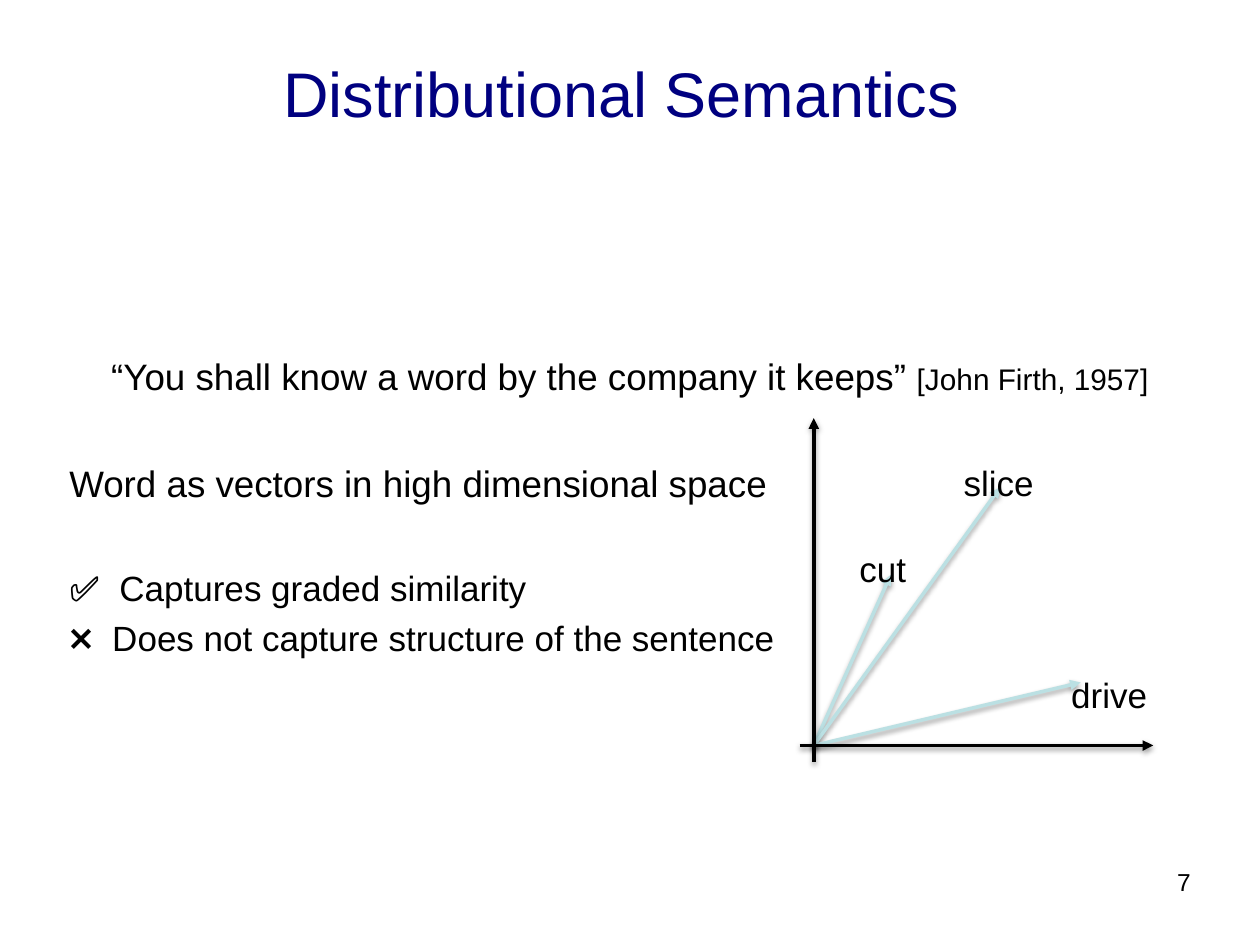
from lxml.etree import SubElement
from pptx import Presentation
from pptx.dml.color import RGBColor
from pptx.enum.shapes import MSO_CONNECTOR as Connector
from pptx.enum.text import MSO_ANCHOR as Anchor, MSO_AUTO_SIZE as AutoSize, PP_ALIGN as Align
from pptx.oxml import parse_xml
from pptx.oxml.ns import nsdecls, qn
from pptx.util import Pt

# Content: text with sizes, positions in points
TITLE = "Distributional Semantics "
PAGE_NUMBER = "7"
BODY = [  # spans of (text, size), alignment, space before
    ([("“You shall know a word by the company it keeps” ", 21), ("[John Firth, 1957]", 17)],
     Align.CENTER, 5),
    ([("Word as vectors in high dimensional space", 21)], Align.LEFT, 36),
    ([("✅  Captures graded similarity", 20)], Align.LEFT, 35),
    ([("❌  Does not capture structure of the sentence", 20)], Align.LEFT, 5),
]
ORIGIN = (465, 426)
VECTOR_TIPS = [(509, 328.5), (571.5, 278.5), (617.5, 390)]
VECTOR_LABELS = [("cut", (487.5, 309.5, 34.5, 29.5)),
                 ("slice", (547, 260, 48, 29.5)),
                 ("drive", (608.5, 381.5, 52, 29.5))]
AXES = [((457, ORIGIN[1]), (659, ORIGIN[1])),
        ((ORIGIN[0], 435.5), (ORIGIN[0], 239))]
BLACK, NAVY, PALE_BLUE = "000000", "000080", "BBE0E3"


def color(value):
    return RGBColor.from_string(value)


def place(shape, left, top, width, height):
    shape.left, shape.top = Pt(left), Pt(top)
    shape.width, shape.height = Pt(width), Pt(height)


def write(shape, paragraphs, ink=BLACK, anchor=Anchor.TOP, wrap=True):
    frame = shape.text_frame
    frame.auto_size = AutoSize.NONE if wrap else AutoSize.SHAPE_TO_FIT_TEXT
    frame.word_wrap, frame.vertical_anchor = wrap, anchor
    frame.margin_left = frame.margin_right = Pt(3.6)
    frame.margin_top = frame.margin_bottom = Pt(3.6)
    for index, (spans, align, before) in enumerate(paragraphs):
        para = frame.add_paragraph() if index else frame.paragraphs[0]
        para.alignment, para.space_before = align, Pt(before)
        properties = para._p.get_or_add_pPr()
        properties.set("marL", "0")
        properties.set("indent", "0")
        SubElement(properties, qn("a:buNone"))
        for text, size in spans:
            span = para.add_run()
            span.text = text
            span.font.name, span.font.size = "Arial", Pt(size)
            span.font.color.rgb = color(ink)


def add_label(shapes, text, area, size=20, align=Align.LEFT):
    box = shapes.add_textbox(0, 0, 0, 0)
    write(box, [([(text, size)], align, 0)], wrap=False)
    place(box, *area)


def add_arrow(shapes, start, end, ink):
    arrow = shapes.add_connector(Connector.STRAIGHT, *map(Pt, start + end))
    arrow.line.color.rgb, arrow.line.width = color(ink), Pt(2)
    SubElement(arrow.line._get_or_add_ln(), qn("a:tailEnd"), type="triangle")
    arrow._element.spPr.append(parse_xml(
        f'<a:effectLst {nsdecls("a")}><a:outerShdw blurRad="{Pt(3)}" dist="{Pt(1.6)}" '
        'dir="5400000" rotWithShape="0"><a:srgbClr val="000000"><a:alpha val="38000"/>'
        '</a:srgbClr></a:outerShdw></a:effectLst>'))


deck = Presentation()
deck.slide_width, deck.slide_height = Pt(720), Pt(540)
page = deck.slides.add_slide(deck.slide_layouts[1])

# Title, page number and body
title, body = page.shapes.title, page.placeholders[1]
place(title, 36, 21.6, 648, 62.6)
write(title, [([(TITLE, 36)], Align.CENTER, 0)], ink=NAVY, anchor=Anchor.MIDDLE)
add_label(page.shapes, PAGE_NUMBER, (668, 492, 16, 23), size=14, align=Align.RIGHT)
place(body, 36, 96, 648, 386.5)
write(body, BODY, anchor=Anchor.MIDDLE)

# Vector diagram
diagram = page.shapes.add_group_shape().shapes
for tip in VECTOR_TIPS:
    add_arrow(diagram, ORIGIN, tip, PALE_BLUE)
for word, area in VECTOR_LABELS:
    add_label(diagram, word, area)
for start, end in AXES:
    add_arrow(diagram, start, end, BLACK)

deck.save("out.pptx")
